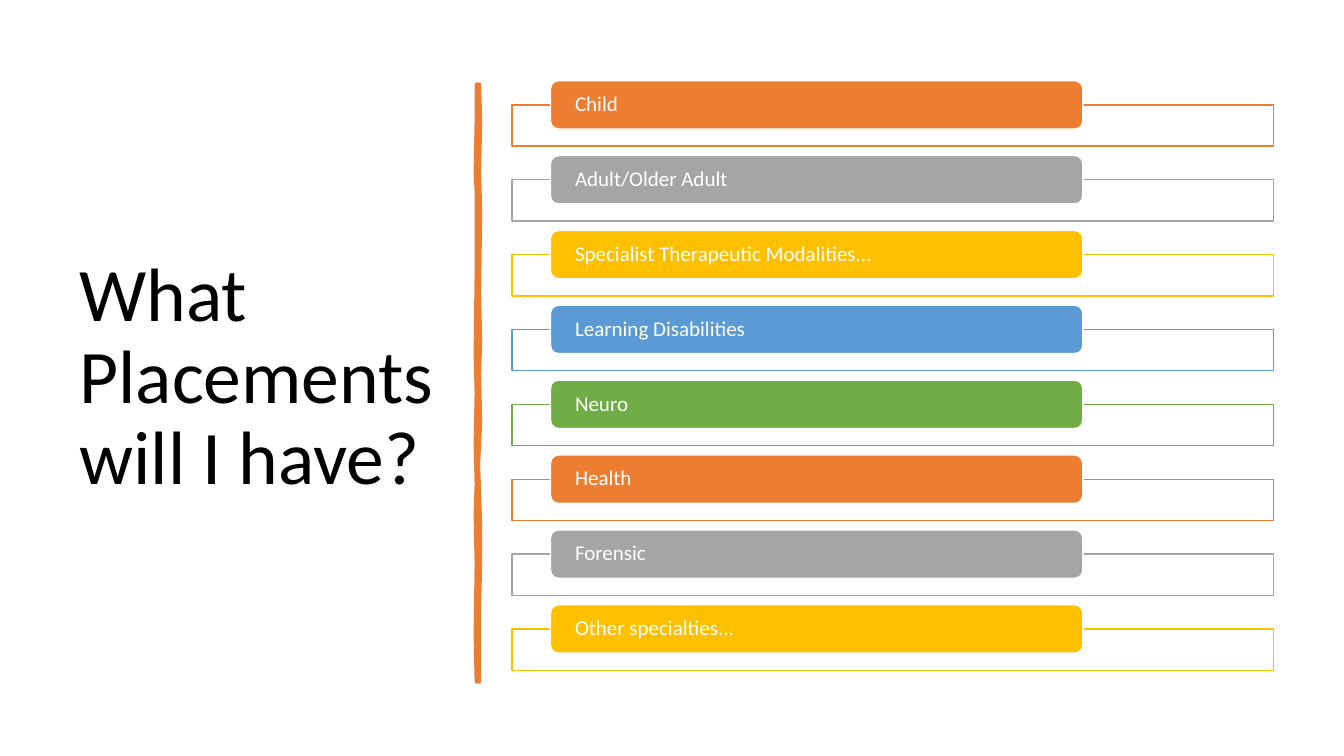
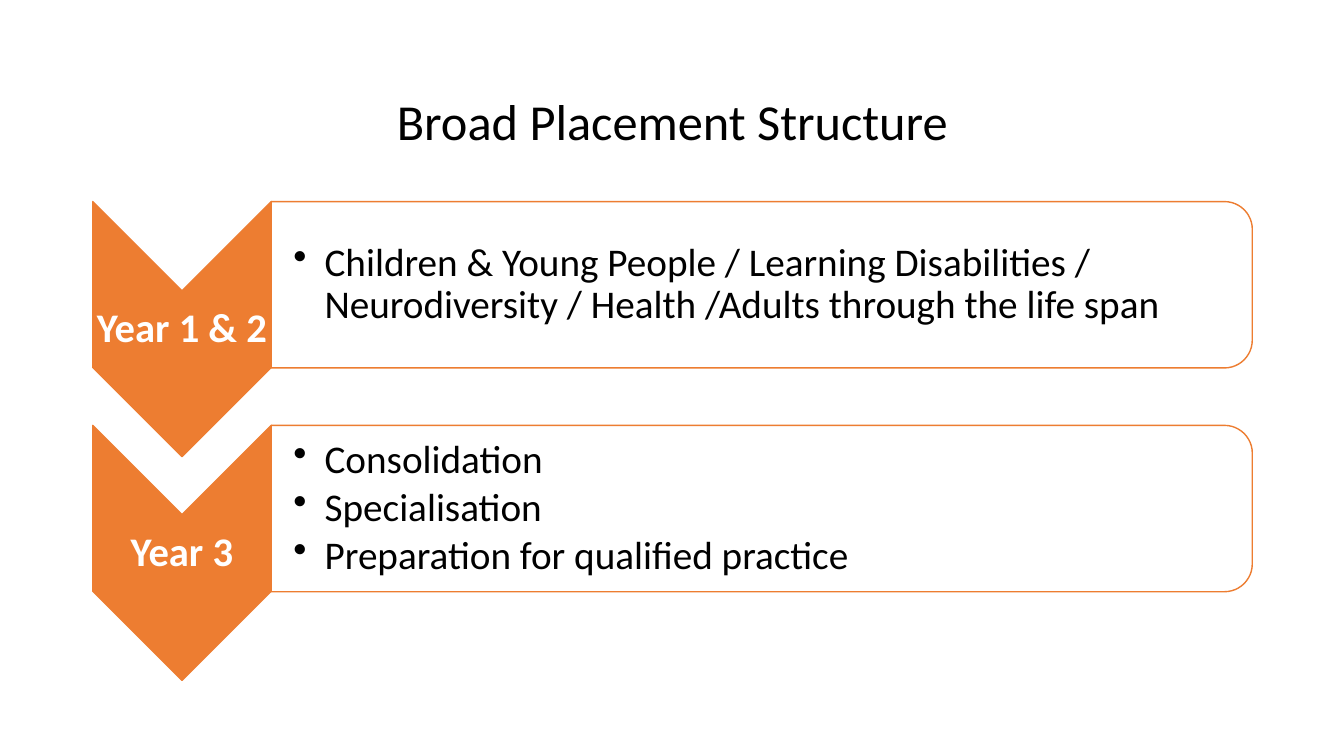
import lxml.etree
import pptx
import pptx.dml.color
import pptx.enum.shapes
import pptx.enum.text
import pptx.oxml.ns
import pptx.util

Inches = pptx.util.Inches
Pt = pptx.util.Pt
Shapes = pptx.enum.shapes.MSO_SHAPE
Align = pptx.enum.text.PP_ALIGN


class Theme:
    font = "Calibri"
    black, white = "000000", "FFFFFF"
    orange, grey, gold = "ED7D31", "A5A5A5", "FFC000"
    blue, green = "5B9BD5", "70AD47"
    cycle = (orange, grey, gold, blue, green)
    side_title, top_title = 54, 36
    bar, year, detail = 15, 29, 28
    outline, brush = 1, 3.25
    leading = 0.9


class Deck:
    def __init__(self, theme):
        self.theme = theme
        self.show = pptx.Presentation()
        self.show.slide_width = Inches(13.33)
        self.show.slide_height = Inches(7.5)
        self.slide = None

    def new_slide(self):
        self.slide = self.show.slides.add_slide(self.show.slide_layouts[6])

    def paint(self, shape, fill, line, width):
        rgb = pptx.dml.color.RGBColor.from_string
        shape.shadow.inherit = False
        shape.fill.solid()
        shape.fill.fore_color.rgb = rgb(fill)
        shape.line.color.rgb = rgb(line)
        shape.line.width = Pt(width)
        return shape

    def box(self, kind, left, top, width, height, fill, line):
        shape = self.slide.shapes.add_shape(
            kind, Inches(left), Inches(top), Inches(width), Inches(height))
        return self.paint(shape, fill, line, self.theme.outline)

    def turned_box(self, kind, left, top, width, height, fill, line):
        """A shape turned a quarter clockwise that covers the given area."""
        shift = (width - height) / 2
        shape = self.box(kind, left + shift, top - shift, height, width, fill, line)
        shape.rotation = 90
        return shape

    def set_text(self, shape, text, size, color, align=Align.LEFT, bold=False,
                 insets=(0.1, 0.05), gap=0, hang=0):
        frame = shape.text_frame
        frame.text = text
        frame.word_wrap = True
        frame.vertical_anchor = pptx.enum.text.MSO_ANCHOR.MIDDLE
        side, edge = insets
        frame.margin_left = Inches(side)
        frame.margin_right = Inches(min(side, 0.1))
        frame.margin_top = frame.margin_bottom = Inches(edge)
        for paragraph in frame.paragraphs:
            paragraph.alignment = align
            paragraph.line_spacing = self.theme.leading
            paragraph.space_after = Pt(gap)
            if hang:
                self.bullet(paragraph, hang)
            for run in paragraph.runs:
                run.font.name = self.theme.font
                run.font.size = Pt(size)
                run.font.bold = bold
                run.font.color.rgb = pptx.dml.color.RGBColor.from_string(color)

    def bullet(self, paragraph, hang):
        properties = paragraph._p.get_or_add_pPr()
        properties.set("marL", str(Inches(hang)))
        properties.set("indent", str(-Inches(hang)))
        mark = lxml.etree.SubElement(properties, pptx.oxml.ns.qn("a:buChar"))
        mark.set("char", "•")

    def text(self, left, top, width, height, text, size, color, **style):
        area = self.slide.shapes.add_textbox(
            Inches(left), Inches(top), Inches(width), Inches(height))
        self.set_text(area, text, size, color, **style)

    def title(self, left, top, width, height, text, size, align=Align.LEFT):
        self.text(left, top, width, height, text, size, self.theme.black, align=align)

    def brush_stroke(self, points):
        corners = [(Inches(x), Inches(y)) for x, y in points]
        builder = self.slide.shapes.build_freeform(*corners[0])
        builder.add_line_segments(corners[1:], close=True)
        color = self.theme.orange
        stroke = self.paint(builder.convert_to_shape(), color, color, self.theme.brush)
        outline = stroke._element.spPr.find(pptx.oxml.ns.qn("a:ln"))
        lxml.etree.SubElement(outline, pptx.oxml.ns.qn("a:round"))

    def placement(self, top, name, color):
        white = self.theme.white
        self.box(Shapes.RECTANGLE, 5.08, top + 0.24, 7.55, 0.41, white, color)
        bar = self.box(Shapes.ROUNDED_RECTANGLE, 5.46, top, 5.28, 0.48, color, white)
        self.set_text(bar, name, self.theme.bar, white, insets=(0.22, 0))

    def stage(self, top, year, details):
        theme = self.theme
        self.turned_box(Shapes.CHEVRON, 0.92, top, 1.77, 2.53, theme.orange, theme.orange)
        self.text(0.92, top + 0.89, 1.77, 0.76, year, theme.year, theme.white,
                  align=Align.CENTER, bold=True, insets=(0.02, 0.02))
        self.turned_box(Shapes.ROUND_2_SAME_RECTANGLE, 2.69, top, 9.73, 1.65,
                        theme.white, theme.orange)
        self.text(2.69, top + 0.08, 9.65, 1.49, "\n".join(details), theme.detail,
                  theme.black, insets=(0.22, 0.02), gap=4, hang=0.31)


def main():
    theme = Theme()
    deck = Deck(theme)

    # Placement areas
    deck.new_slide()
    deck.title(0.69, 0.7, 3.74, 6.11, "What Placements will I have?", theme.side_title)
    right_edge = [(4.75, 0.84), (4.76, 1.2), (4.75, 1.7), (4.76, 2.1), (4.75, 2.9),
                  (4.76, 3.4), (4.75, 3.7), (4.76, 4.2), (4.74, 4.6), (4.76, 5.2),
                  (4.76, 5.6), (4.75, 6), (4.75, 6.76)]
    left_edge = [(4.73, 6.76), (4.72, 6.3), (4.73, 5.6), (4.72, 5.1), (4.73, 4.8),
                 (4.72, 4.4), (4.73, 3.9), (4.72, 3.5), (4.73, 2.7), (4.73, 1.9),
                 (4.72, 1.7), (4.73, 1.2), (4.73, 0.84)]
    deck.brush_stroke(right_edge + left_edge)
    placements = ["Child", "Adult/Older Adult", "Specialist Therapeutic Modalities...",
                  "Learning Disabilities", "Neuro", "Health", "Forensic",
                  "Other specialties..."]
    first_top, last_top = 0.8, 6
    pitch = (last_top - first_top) / (len(placements) - 1)
    for index, name in enumerate(placements):
        deck.placement(first_top + index * pitch, name,
                       theme.cycle[index % len(theme.cycle)])

    # Placement structure by year
    deck.new_slide()
    deck.title(0.92, 0.61, 11.5, 1.24, "Broad Placement Structure", theme.top_title,
               Align.CENTER)
    stages = [
        ("Year 1 & 2", ["Children & Young People / Learning Disabilities / "
                        "Neurodiversity / Health /Adults through the life span"]),
        ("Year 3", ["Consolidation", "Specialisation",
                    "Preparation for qualified practice"]),
    ]
    for index, (year, details) in enumerate(stages):
        deck.stage(2 + index * 2.22, year, details)

    deck.show.save("out.pptx")


if __name__ == "__main__":
    main()
